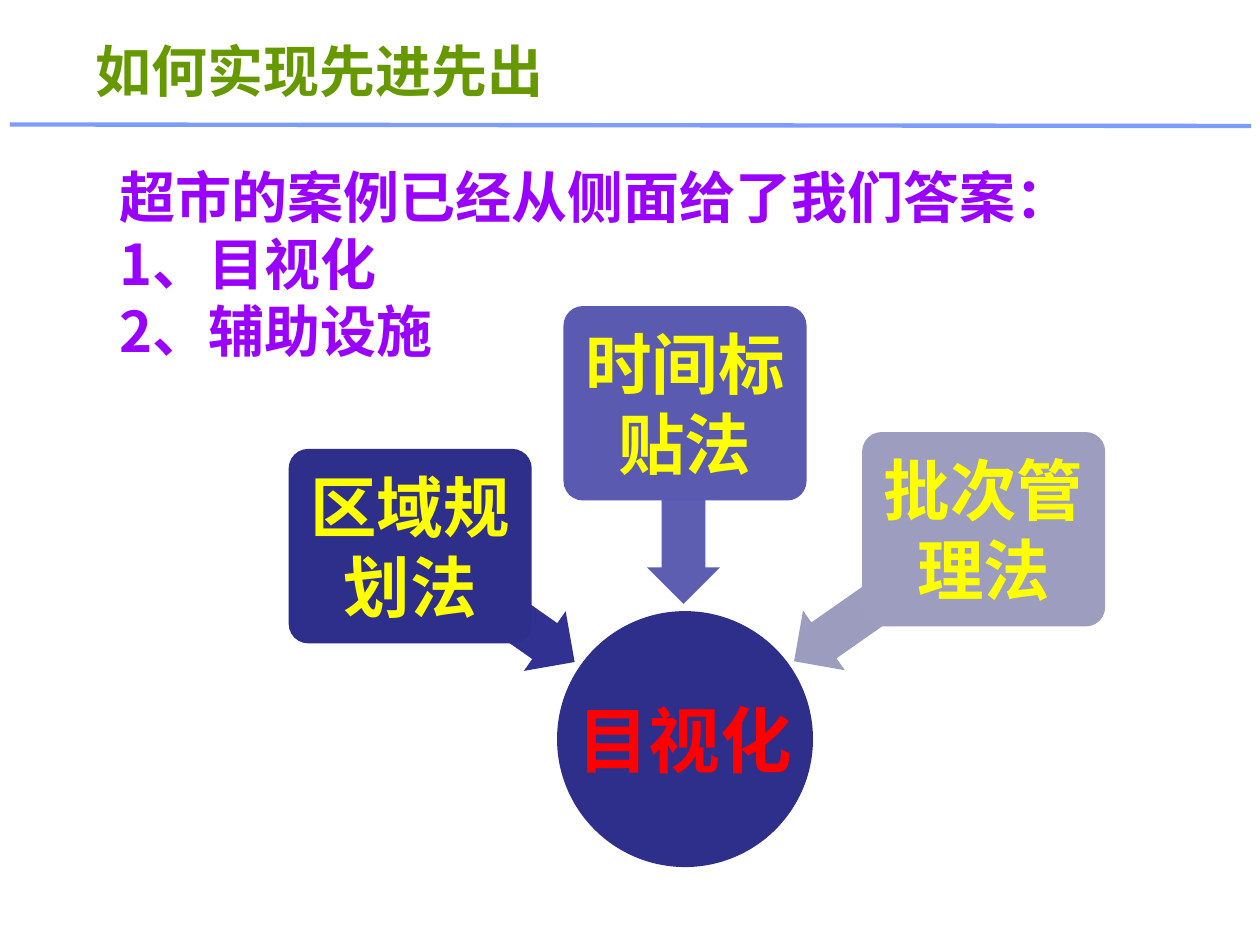
from lxml import etree
from pptx import Presentation
from pptx.dml.color import RGBColor
from pptx.enum.shapes import MSO_CONNECTOR, MSO_SHAPE
from pptx.enum.text import MSO_ANCHOR, PP_ALIGN
from pptx.oxml.ns import qn
from pptx.util import Cm, Pt

GREEN = RGBColor(0x66, 0x99, 0x00)
PURPLE = RGBColor(0x99, 0x00, 0xFF)
BLUE = RGBColor(0x33, 0x66, 0xFF)
RED = RGBColor(0xFF, 0x00, 0x00)
YELLOW = RGBColor(0xFF, 0xFF, 0x00)
NAVY = RGBColor(0x2E, 0x2E, 0x8B)
NAVY_ARROW = RGBColor(0x31, 0x31, 0x92)
VIOLET = RGBColor(0x5A, 0x5A, 0xB1)
VIOLET_ARROW = RGBColor(0x5D, 0x5D, 0xB2)
GREY = RGBColor(0x9D, 0x9D, 0xC0)
GREY_ARROW = RGBColor(0x9C, 0x9C, 0xBF)
CJK_FONT = "Noto Sans CJK SC"

METHODS = [
    ("区域规划法", (5.82, 9.05), NAVY, (8.0, 11.48, 3.94), NAVY_ARROW),
    ("时间标贴法", (11.36, 6.17), VIOLET, (11.81, 9.47, 3.94), VIOLET_ARROW),
    ("批次管理法", (17.38, 8.71), GREY, (15.6, 11.3, 4.52), GREY_ARROW),
]


def style_paragraph(paragraph, size, color, latin=CJK_FONT):
    font = paragraph.font
    font.size = Pt(size)
    font.bold = True
    font.color.rgb = color
    font.name = latin
    defaults = paragraph._p.pPr.find(qn("a:defRPr"))
    etree.SubElement(defaults, qn("a:ea"), typeface=CJK_FONT)


def add_text(slide, lines, left, top, width, height, color, spacing=None):
    frame = slide.shapes.add_textbox(
        Cm(left), Cm(top), Cm(width), Cm(height)).text_frame
    frame.word_wrap = True
    frame.text = "\n".join(lines)
    for paragraph in frame.paragraphs:
        paragraph.line_spacing = spacing
        style_paragraph(paragraph, 32, color)


def add_block(slide, kind, left, top, width, height, fill):
    block = slide.shapes.add_shape(
        kind, Cm(left), Cm(top), Cm(width), Cm(height))
    block.shadow.inherit = False
    block.fill.solid()
    block.fill.fore_color.rgb = fill
    block.line.fill.background()
    return block


def add_label(block, label, size, color, inset, wrap=True):
    frame = block.text_frame
    frame.word_wrap = wrap
    frame.vertical_anchor = MSO_ANCHOR.MIDDLE
    frame.margin_left = frame.margin_right = Cm(inset)
    frame.margin_top = frame.margin_bottom = Cm(inset)
    frame.text = label
    paragraph = frame.paragraphs[0]
    paragraph.alignment = PP_ALIGN.CENTER
    style_paragraph(paragraph, size, color, "Arial")


def add_title_rule(slide):
    rule = slide.shapes.add_connector(
        MSO_CONNECTOR.STRAIGHT, Cm(0.2), Cm(2.51), Cm(25.22), Cm(2.54))
    rule.line.width = Pt(2.5)
    rule.line.color.rgb = BLUE
    properties = rule._element.spPr
    shade = next(properties.iter(qn("a:srgbClr")))
    etree.SubElement(shade, qn("a:alpha"), val="63000")
    etree.SubElement(properties, qn("a:effectLst"))


def add_method(slide, label, corner, fill, arrow_place, arrow_fill, angle):
    left, top, length = arrow_place
    arrow = add_block(slide, MSO_SHAPE.LEFT_ARROW,
                      left, top, length, 1.47, arrow_fill)
    arrow.adjustments[0] = 0.6
    arrow.adjustments[1] = 0.5
    arrow.rotation = angle
    card = add_block(slide, MSO_SHAPE.ROUNDED_RECTANGLE,
                     *corner, 4.9, 3.92, fill)
    card.adjustments[0] = 0.1
    add_label(card, label, 38, YELLOW, 0.2)


def main():
    presentation = Presentation()
    presentation.slide_width = Cm(25.4)
    presentation.slide_height = Cm(19.05)
    slide = presentation.slides.add_slide(presentation.slide_layouts[6])

    add_title_rule(slide)
    add_text(slide, ["如何实现先进先出"], 1.68, 1.09, 21.77, 1.14, GREEN, Pt(25))

    goal = add_block(slide, MSO_SHAPE.OVAL, 11.23, 12.32, 5.16, 5.16, NAVY)
    add_label(goal, "目视化", 41, RED, 0.08, wrap=False)
    for index, method in enumerate(METHODS):
        add_method(slide, *method, angle=215 + 55 * index)

    add_text(slide,
             ["超市的案例已经从侧面给了我们答案：", "1、目视化", "2、辅助设施"],
             2.16, 3.15, 20.12, 4.32, PURPLE)
    presentation.save("out.pptx")


if __name__ == "__main__":
    main()
